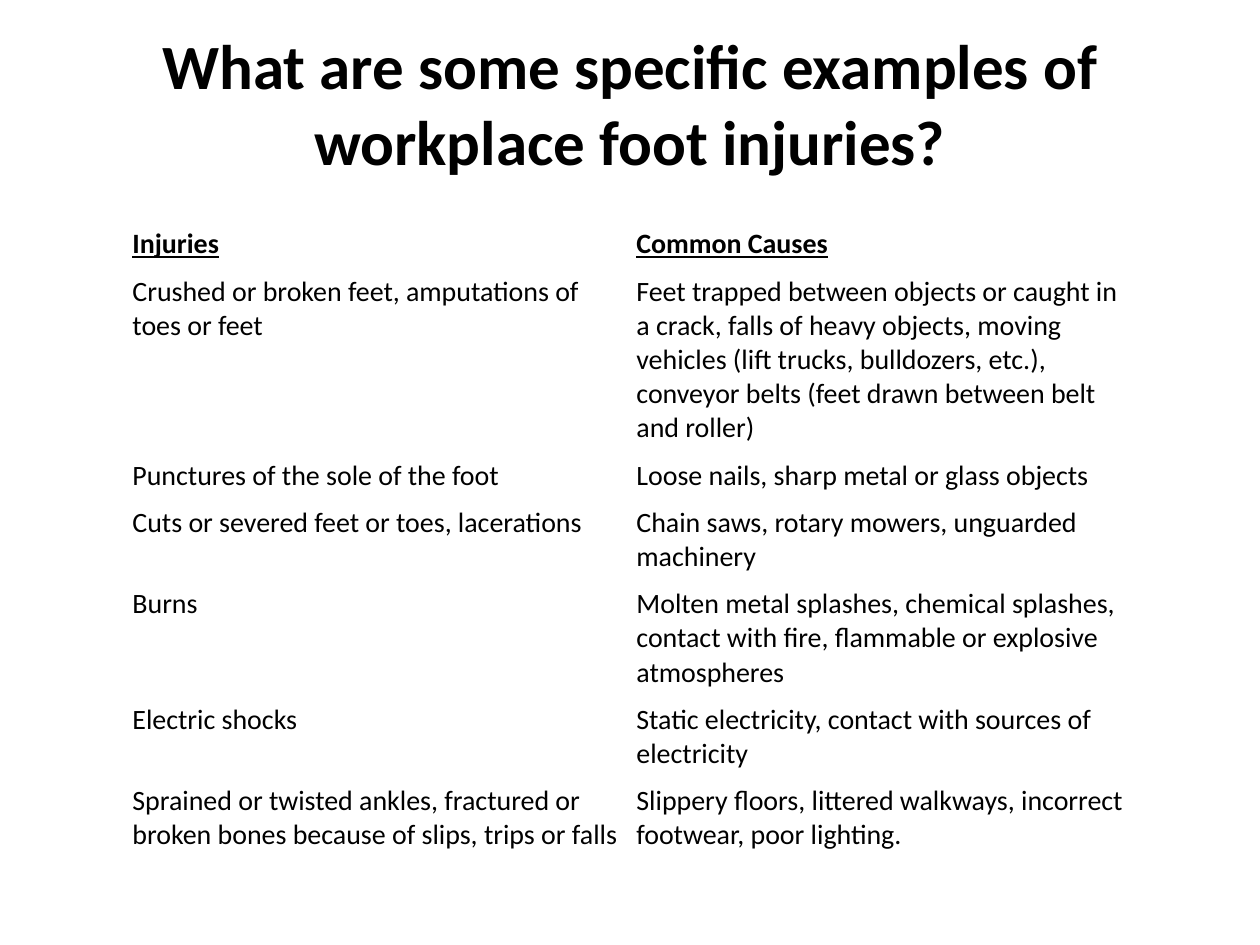
from pptx import Presentation
from pptx.dml.color import RGBColor
from pptx.enum.text import MSO_ANCHOR as Anchor, PP_ALIGN as Align
from pptx.util import Cm, Pt

BLACK = RGBColor(0, 0, 0)
FACE = {"name": "Calibri"}
TITLE = {**FACE, "size": Pt(36), "bold": True}
HEAD = {**FACE, "size": Pt(16), "bold": True, "underline": True}
BODY = {**FACE, "size": Pt(16), "bold": False, "underline": False}
INSET = {f"margin_{side}": Cm(0.13) for side in ("left", "right", "top", "bottom")}
PLAIN = {"first_row": False, "horz_banding": False}

ROWS = [
    (1, "Injuries", "Common Causes"),
    (5, "Crushed or broken feet, amputations of toes or feet",
     "Feet trapped between objects or caught in a crack, falls of heavy objects, "
     "moving vehicles (lift trucks, bulldozers, etc.), conveyor belts "
     "(feet drawn between belt and roller)"),
    (1, "Punctures of the sole of the foot",
     "Loose nails, sharp metal or glass objects"),
    (2, "Cuts or severed feet or toes, lacerations",
     "Chain saws, rotary mowers, unguarded machinery"),
    (3, "Burns",
     "Molten metal splashes, chemical splashes, contact with fire, "
     "flammable or explosive atmospheres"),
    (2, "Electric shocks",
     "Static electricity, contact with sources of electricity"),
    (2, "Sprained or twisted ankles, fractured or broken bones because of slips, "
     "trips or falls",
     "Slippery floors, littered walkways, incorrect footwear, poor lighting."),
]


def apply(item, look):
    for name, value in look.items():
        setattr(item, name, value)


def write(frame, text, look, align):
    para = frame.paragraphs[0]
    para.alignment = align
    run = para.add_run()
    run.text = text
    apply(run.font, look)
    run.font.color.rgb = BLACK


def add_title(slide, left, top, width, height):
    title = slide.shapes.title
    apply(title, {"left": Cm(left), "top": Cm(top),
                  "width": Cm(width), "height": Cm(height)})
    title.text_frame.vertical_anchor = Anchor.MIDDLE
    write(title.text_frame,
          "What are some specific examples of workplace foot injuries?",
          TITLE, Align.CENTER)


def add_grid(slide, left, top, widths):
    highs = [0.23 + 0.69 * lines for lines, *_ in ROWS]
    table = slide.shapes.add_table(
        len(ROWS), len(widths), Cm(left), Cm(top),
        Cm(sum(widths)), Cm(sum(highs))).table
    apply(table, PLAIN)
    for col, width in zip(table.columns, widths):
        col.width = Cm(width)
    for i, (row, high, (_, *texts)) in enumerate(zip(table.rows, highs, ROWS)):
        row.height = Cm(high)
        for cell, text in zip(row.cells, texts):
            apply(cell, INSET)
            cell.vertical_anchor = Anchor.TOP if i else Anchor.MIDDLE
            cell.fill.background()
            write(cell.text_frame, text, BODY if i else HEAD, Align.LEFT)


def main():
    deck = Presentation()
    apply(deck, {"slide_width": Cm(25.4), "slide_height": Cm(19.05)})
    slide = deck.slides.add_slide(deck.slide_layouts[5])
    add_title(slide, 1.27, 0.2, 22.86, 3.73)
    add_grid(slide, 2.54, 4.45, (10.16, 10.24))
    deck.save("out.pptx")


if __name__ == "__main__":
    main()
